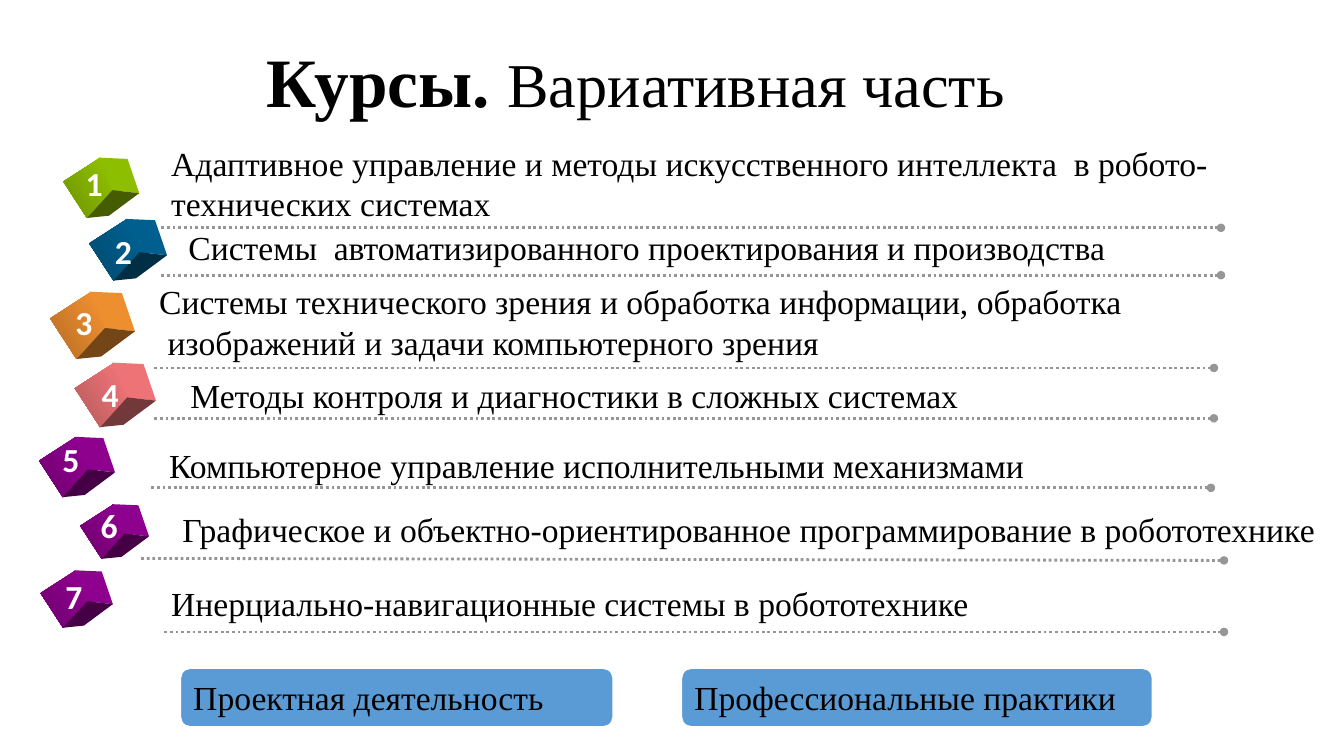
from collections import namedtuple

from lxml.etree import SubElement
from pptx import Presentation
from pptx.dml.color import RGBColor
from pptx.enum.dml import MSO_LINE
from pptx.enum.shapes import MSO_CONNECTOR, MSO_SHAPE as SHAPE
from pptx.enum.text import MSO_ANCHOR as ANCHOR, PP_ALIGN as ALIGN
from pptx.oxml.ns import qn
from pptx.util import Inches, Pt

SERIF = "Times New Roman"
PURPLE = ("990099", "6D006D")
CUBE_TURN = 57
TOP_FACE = [(0.12, -0.7), (0.79, -0.67), (1.06, 0.12), (0.44, 0.05)]
BOTTOM_FACE = [(0.44, 0.05), (1.06, 0.12), (0.36, 0.64), (-0.14, 0.69)]

Course = namedtuple("Course", "lines cube colors number label rule")
COURSES = [
    Course(["Адаптивное управление и методы искусственного интеллекта  в робото-",
            "технических системах"],
           (0.71, 1.65, 0.43), ("99CC00", "6D9200"), (0.75, 1.57),
           (1.6, 1.37, 10.59, 0.91), (1.6, 2.26, 12.11, 2.26)),
    Course(["Системы  автоматизированного проектирования и производства"],
           (0.97, 2.26, 0.44), ("006699", "00496D"), (1.04, 2.24),
           (1.77, 2.2, 9.39, 0.47), (1.6, 2.73, 12.11, 2.73)),
    Course(["Системы технического зрения и обработка информации, обработка",
            " изображений и задачи компьютерного зрения"],
           (0.59, 2.99, 0.48), ("FF9933", "B66D24"), (0.65, 2.95),
           (1.48, 2.74, 9.85, 0.91), (1.53, 3.65, 12.04, 3.65)),
    Course(["Методы контроля и диагностики в сложных системах"],
           (0.83, 3.69, 0.46), ("FF7C80", "B6595C"), (0.91, 3.66),
           (1.79, 3.67, 7.91, 0.51), (1.53, 4.15, 12.04, 4.15)),
    Course(["Компьютерное управление исполнительными механизмами"],
           (0.47, 4.42, 0.43), PURPLE, (0.52, 4.31),
           (1.58, 4.36, 8.9, 0.51), (1.5, 4.84, 12.01, 4.84)),
    Course(["Графическое и объектно-ориентированное программирование в робототехнике"],
           (0.87, 5.08, 0.39), PURPLE, (0.9, 4.96),
           (1.71, 5, 11.55, 0.51), (1.4, 5.54, 12.14, 5.56)),
    Course(["Инерциально-навигационные системы в робототехнике"],
           (0.48, 5.74, 0.41), PURPLE, (0.55, 5.66),
           (1.6, 5.73, 8.87, 0.54), (1.63, 6.27, 12.14, 6.27)),
]
ACTIVITIES = [
    ("Проектная деятельность", (1.79, 6.63, 4.29, 0.58)),
    ("Профессиональные практики", (6.76, 6.63, 4.67, 0.58)),
]


def rgb(color):
    """Turn a hex string into a colour."""
    return RGBColor.from_string(color)


def shade(color, factor):
    """Darken a hex colour by a factor."""
    channels = (int(color[i:i + 2], 16) for i in (0, 2, 4))
    return "".join(f"{round(channel * factor):02X}" for channel in channels)


def write(holder, paragraphs, size=24, font=SERIF, color="000000", bold=False,
          align=ALIGN.LEFT, anchor=ANCHOR.TOP, wrap=True, spacing=None):
    """Fill a shape with paragraphs, each a list of (text, overrides) runs."""
    frame = holder.text_frame
    frame.word_wrap = wrap
    frame.vertical_anchor = anchor
    for index, runs in enumerate(paragraphs):
        paragraph = frame.paragraphs[0] if index == 0 else frame.add_paragraph()
        paragraph.alignment = align
        paragraph.line_spacing = spacing
        for text, overrides in runs:
            run = paragraph.add_run()
            run.text = text
            run.font.name = font
            run.font.size = Pt(overrides.get("size", size))
            run.font.bold = overrides.get("bold", bold)
            run.font.color.rgb = rgb(color)


def add_box(slide, box):
    """Add an empty text box."""
    return slide.shapes.add_textbox(*map(Inches, box))


def add_title(slide, box):
    """Place the two-weight heading."""
    heading = [("Курсы. ", {"size": 49.5, "bold": True}),
               ("Вариативная часть", {"size": 44.5})]
    write(add_box(slide, box), [heading], align=ALIGN.CENTER,
          anchor=ANCHOR.MIDDLE, spacing=0.7)


def add_cube(slide, left, top, side, colors):
    """Draw a tilted cube: a gradient front and two shaded faces."""
    front = slide.shapes.add_shape(SHAPE.RECTANGLE, *map(Inches, (left, top, side, side)))
    front.rotation = CUBE_TURN
    front.shadow.inherit = False
    front.line.fill.background()
    front.fill.gradient()
    front.fill.gradient_angle = 270
    for stop, color in zip(front.fill.gradient_stops, colors):
        stop.color.rgb = rgb(color)
    center_x, center_y = left + side / 2, top + side / 2
    for outline, factor in ((TOP_FACE, 0.93), (BOTTOM_FACE, 0.45)):
        corners = [(Inches(center_x + x * side), Inches(center_y + y * side))
                   for x, y in outline]
        builder = slide.shapes.build_freeform(*corners[0])
        builder.add_line_segments(corners[1:], close=True)
        face = builder.convert_to_shape()
        face.shadow.inherit = False
        face.line.fill.background()
        face.fill.solid()
        face.fill.fore_color.rgb = rgb(shade(colors[0], factor))


def add_rule(slide, ends):
    """Draw a dotted line that ends in a dot."""
    rule = slide.shapes.add_connector(MSO_CONNECTOR.STRAIGHT, *map(Inches, ends))
    rule.line.color.rgb = rgb("969696")
    rule.line.width = Pt(2)
    rule.line.dash_style = MSO_LINE.ROUND_DOT
    SubElement(rule.line._get_or_add_ln(), qn("a:tailEnd"), type="oval")
    SubElement(rule._element.spPr, qn("a:effectLst"))


def add_course(slide, number, course):
    """Place one numbered course with its cube and underline."""
    add_cube(slide, *course.cube, course.colors)
    write(add_box(slide, course.label), [[(line, {})] for line in course.lines], wrap=False)
    write(add_box(slide, (*course.number, 0.4, 0.5)), [[(str(number), {})]],
          font="Calibri", color="FFFFFF", bold=True)
    add_rule(slide, course.rule)


def add_activity(slide, name, box):
    """Place a rounded blue panel."""
    panel = slide.shapes.add_shape(SHAPE.ROUNDED_RECTANGLE, *map(Inches, box))
    panel.shadow.inherit = False
    panel.fill.solid()
    panel.fill.fore_color.rgb = rgb("5B9BD5")
    panel.line.color.rgb = rgb("FFFFFF")
    panel.line.width = Pt(1)
    write(panel, [[(name, {})]], anchor=ANCHOR.MIDDLE)


def main():
    """Build and save the slide."""
    deck = Presentation()
    deck.slide_width, deck.slide_height = Inches(13.33), Inches(7.5)
    slide = deck.slides.add_slide(deck.slide_layouts[6])
    add_title(slide, (0.66, 0.53, 11.29, 0.73))
    for number, course in enumerate(COURSES, 1):
        add_course(slide, number, course)
    for name, box in ACTIVITIES:
        add_activity(slide, name, box)
    deck.save("out.pptx")


if __name__ == "__main__":
    main()
